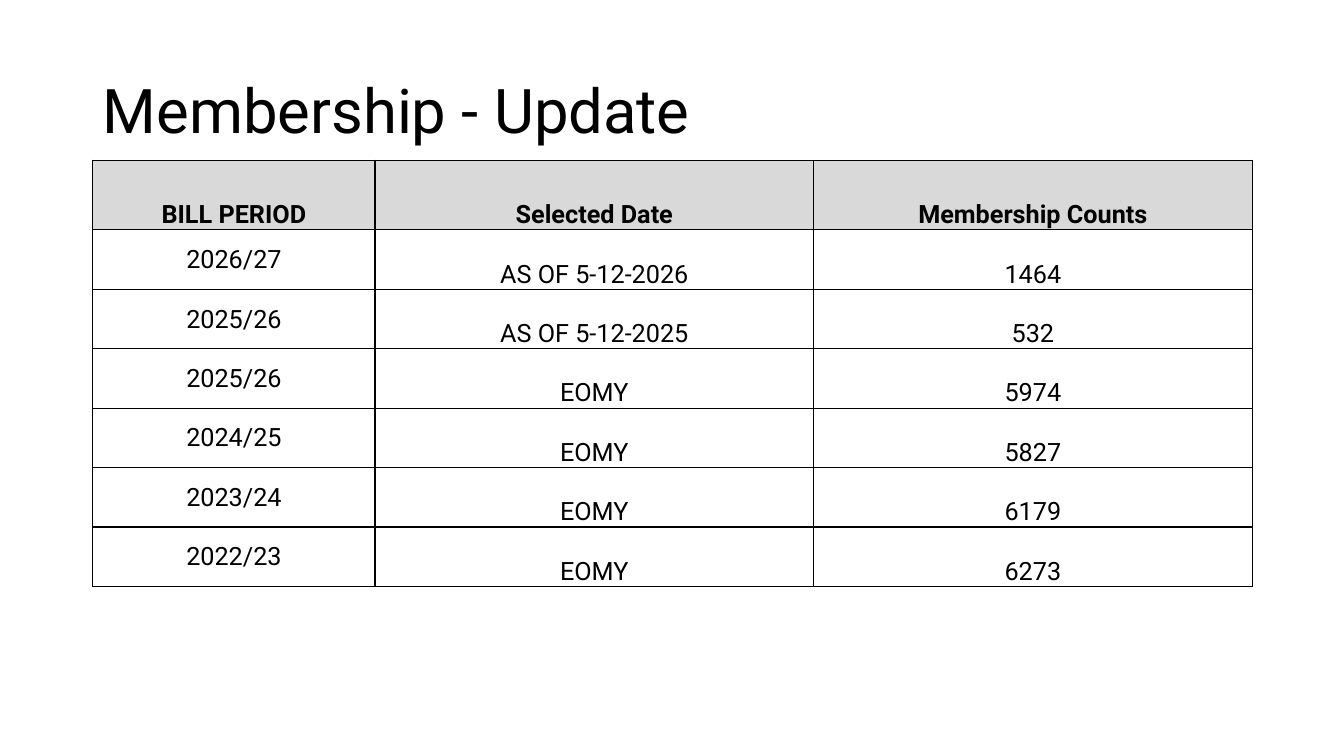
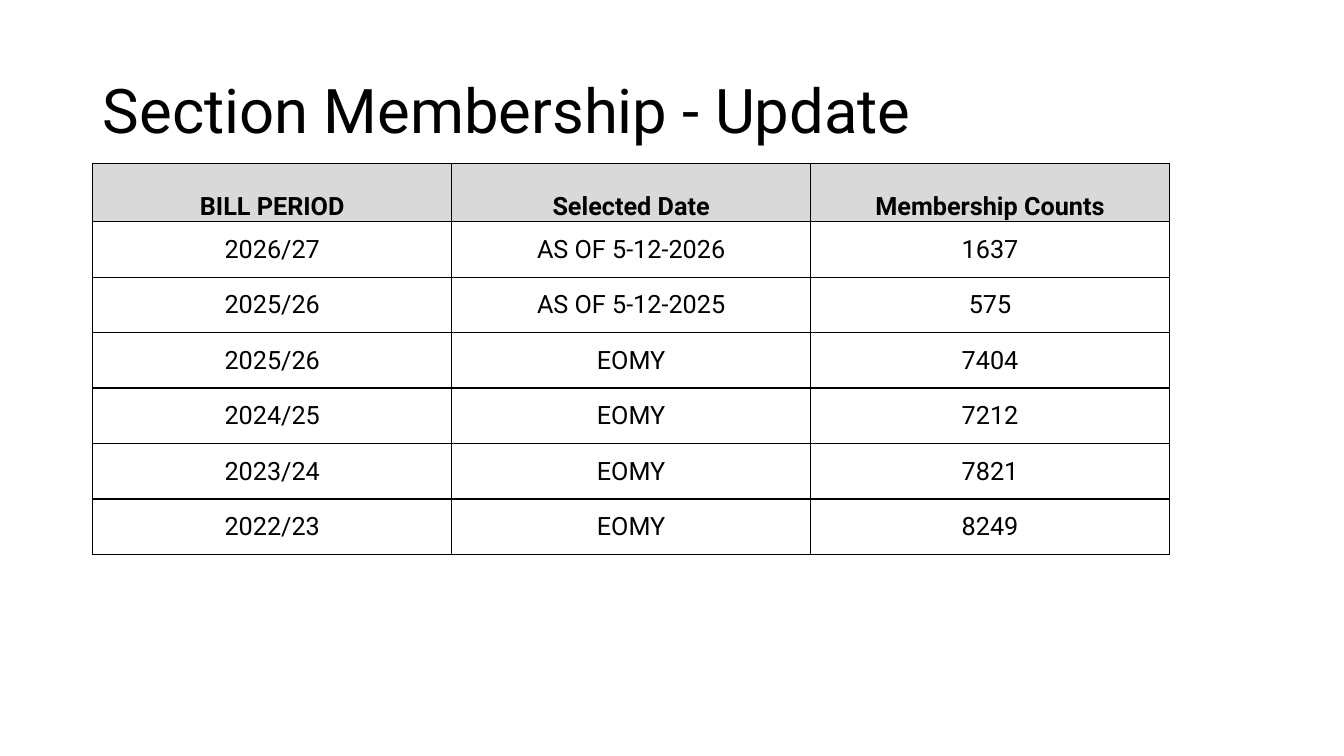
from lxml import etree
from pptx import Presentation
from pptx import util as u
from pptx.dml.color import RGBColor
from pptx.enum import text
from pptx.oxml import ns

WIDE, HIGH = 13.33, 7.5
LEFT = 0.92
FONT = "Roboto"
INK, GREY = "000000", "D9D9D9"
MID, LOW = text.MSO_ANCHOR.MIDDLE, text.MSO_ANCHOR.BOTTOM
HEAD = ("BILL PERIOD", "Selected Date", "Membership Counts")
ROWS = (
    ("2026/27", "AS OF 5-12-2026"),
    ("2025/26", "AS OF 5-12-2025"),
    ("2025/26", "EOMY"),
    ("2024/25", "EOMY"),
    ("2023/24", "EOMY"),
    ("2022/23", "EOMY"),
)
SLIDES = (
    {"title": "Membership - Update", "top": 1.59, "cols": (2.8, 4.35, 4.35),
     "head": 0.69, "row": 0.59, "anchors": (MID, LOW, LOW),
     "counts": (1464, 532, 5974, 5827, 6179, 6273)},
    {"title": "Section Membership - Update", "top": 1.62, "cols": (3.56,) * 3,
     "head": 0.58, "row": 0.55, "anchors": (MID,) * 3,
     "counts": (1637, 575, 7404, 7212, 7821, 8249)},
)


def color(code):
    """Turn a hex string into a colour."""
    return RGBColor.from_string(code)


def write(para, words, size, align, bold=False):
    """Add one styled run to a paragraph."""
    para.alignment = align
    run = para.add_run()
    run.text = words
    font = run.font
    font.name, font.size, font.bold = FONT, u.Pt(size), bold
    font.color.rgb = color(INK)


def border(cell):
    """Draw a thin line on all four sides of a cell."""
    props = cell._tc.get_or_add_tcPr()
    for spot, side in enumerate("LRTB"):
        line = etree.Element(ns.qn(f"a:ln{side}"), w=str(u.Pt(1)))
        fill = etree.SubElement(line, ns.qn("a:solidFill"))
        etree.SubElement(fill, ns.qn("a:srgbClr"), val=INK)
        props.insert(spot, line)


def style(cell, words, anchor, head):
    """Fill in and format one table cell."""
    cell.margin_left = cell.margin_right = cell.margin_top = u.Inches(0.01)
    cell.margin_bottom = 0
    cell.vertical_anchor = anchor
    if head:
        cell.fill.solid()
        cell.fill.fore_color.rgb = color(GREY)
    else:
        cell.fill.background()
    border(cell)
    write(cell.text_frame.paragraphs[0], words, 18, text.PP_ALIGN.CENTER, head)


def add_title(slide, words):
    """Place and write the slide title."""
    title = slide.shapes.title
    title.left, title.top = u.Inches(LEFT), u.Inches(0.4)
    title.width, title.height = u.Inches(11.5), u.Inches(1.45)
    frame = title.text_frame
    frame.vertical_anchor = MID
    para = frame.paragraphs[0]
    para.line_spacing = 0.9
    write(para, words, 44, text.PP_ALIGN.LEFT)


def add_grid(slide, data):
    """Build the table of membership counts."""
    body = [(*row, str(count)) for row, count in zip(ROWS, data["counts"])]
    lines = [HEAD, *body]
    highs = [data["head"]] + [data["row"]] * len(body)
    table = slide.shapes.add_table(
        len(lines), len(HEAD), u.Inches(LEFT), u.Inches(data["top"]),
        u.Inches(sum(data["cols"])), u.Inches(sum(highs))).table
    table.horz_banding = False
    for col, wide in zip(table.columns, data["cols"]):
        col.width = u.Inches(wide)
    for r, (line, high) in enumerate(zip(lines, highs)):
        table.rows[r].height = u.Inches(high)
        for c, words in enumerate(line):
            anchor = data["anchors"][c] if r else LOW
            style(table.cell(r, c), words, anchor, r == 0)


def main():
    """Build and save the slides."""
    deck = Presentation()
    deck.slide_width, deck.slide_height = u.Inches(WIDE), u.Inches(HIGH)
    for data in SLIDES:
        slide = deck.slides.add_slide(deck.slide_layouts[5])
        add_title(slide, data["title"])
        add_grid(slide, data)
    deck.save("out.pptx")


if __name__ == "__main__":
    main()
